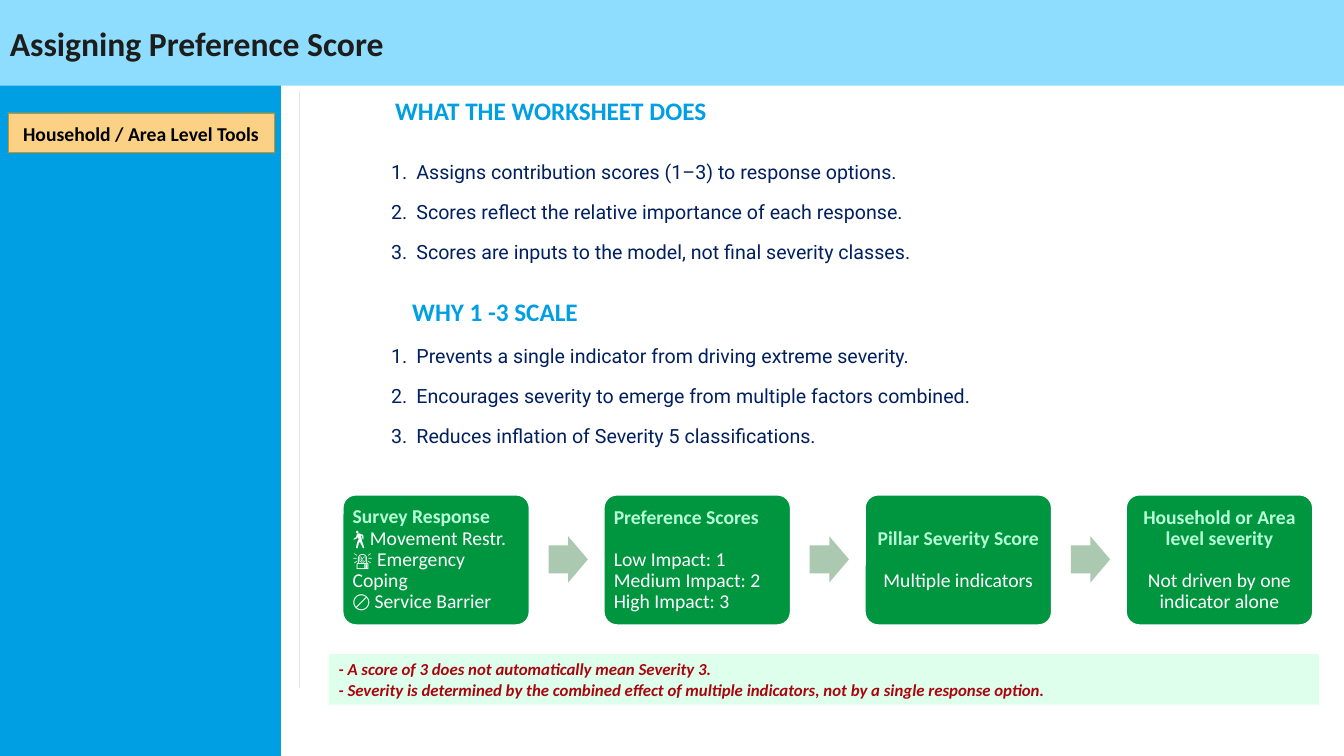
from pptx import Presentation
from pptx.dml.color import RGBColor
from pptx.enum.shapes import MSO_CONNECTOR, MSO_SHAPE
from pptx.enum.text import MSO_ANCHOR, PP_ALIGN
from pptx.oxml.ns import qn
from pptx.util import Inches, Pt
from lxml import etree

RECT = MSO_SHAPE.RECTANGLE
ROUND = MSO_SHAPE.ROUNDED_RECTANGLE
ARROW = MSO_SHAPE.RIGHT_ARROW
LEFT, MID = PP_ALIGN.LEFT, PP_ALIGN.CENTER
TOP, CENTER = MSO_ANCHOR.TOP, MSO_ANCHOR.MIDDLE

deck = Presentation()
deck.slide_width, deck.slide_height = Inches(13.33), Inches(7.5)
slide = deck.slides.add_slide(deck.slide_layouts[6])
shapes = slide.shapes


def block(kind, x, y, w, h, fill, edge=None, width=1):
    shape = shapes.add_shape(kind, Inches(x), Inches(y), Inches(w), Inches(h))
    shape.shadow.inherit = False
    shape.fill.solid()
    shape.fill.fore_color.rgb = RGBColor.from_string(fill)
    if edge:
        shape.line.color.rgb = RGBColor.from_string(edge)
        shape.line.width = Pt(width)
    else:
        shape.line.fill.background()
    return shape


def write(shape, lines, size=14, color="000000", font="Calibri", bold=False,
          italic=False, align=LEFT, anchor=TOP, inset=None, after=0,
          space=1.0, number=False, more=False):
    frame = shape.text_frame
    frame.word_wrap = True
    frame.vertical_anchor = anchor
    if inset is not None:
        frame.margin_left = frame.margin_right = Inches(inset)
        frame.margin_top = frame.margin_bottom = Inches(inset)
    for i, line in enumerate(lines):
        para = frame.add_paragraph() if i or more else frame.paragraphs[0]
        para.alignment = align
        para.line_spacing = space
        para.space_after = Pt(after)
        if number:
            props = para._p.get_or_add_pPr()
            props.set("marL", str(Inches(0.25)))
            props.set("indent", str(Inches(-0.25)))
            mark = etree.SubElement(props, qn("a:buAutoNum"))
            mark.set("type", "arabicPeriod")
        run = para.add_run()
        run.text = line
        face = run.font
        face.size, face.name = Pt(size), font
        face.bold, face.italic = bold, italic
        face.color.rgb = RGBColor.from_string(color)


block(RECT, 0, 0, 2.78, 7.5, "009FE3", "009FE3")
banner = block(RECT, 0, 0, 13.33, 0.85, "8EDDFF")
write(banner, ["Assigning Preference Score"], size=24, color="1D1D1B",
      bold=True, anchor=CENTER)

rule = shapes.add_connector(MSO_CONNECTOR.STRAIGHT, Inches(2.97), Inches(0.9),
                            Inches(2.97), Inches(6.83))
rule.line.color.rgb = RGBColor.from_string("E6E6E6")
rule.line.width = Pt(1)
etree.SubElement(rule._element.spPr, qn("a:effectLst"))

label = block(RECT, 0.08, 1.12, 2.64, 0.39, "FBD185", "DB8E06", 0.5)
write(label, ["Household / Area Level Tools"], bold=True, align=MID,
      anchor=CENTER, space=1.07, after=8)

topics = [
    ("WHAT THE WORKSHEET DOES", 3.82, 0.9, 1.31, 9.3, 1.58, [
        "Assigns contribution scores (1–3) to response options.",
        "Scores reflect the relative importance of each response.",
        "Scores are inputs to the model, not final severity classes."]),
    ("WHY 1 -3 SCALE", 3.99, 2.89, 3.36, 7.51, 1.13, [
        "Prevents a single indicator from driving extreme severity.",
        "Encourages severity to emerge from multiple factors combined.",
        "Reduces inflation of Severity 5 classifications."]),
]
for title, x, y, top, w, h, points in topics:
    head = shapes.add_textbox(Inches(x), Inches(y), Inches(6.68), Inches(0.4))
    write(head, [title], size=18, color="009FE3", bold=True)
    body = shapes.add_textbox(Inches(3.88), Inches(top), Inches(w), Inches(h))
    write(body, points, color="002060", font="Roboto", anchor=CENTER,
          inset=0, after=12, number=True)

note = block(RECT, 3.26, 6.49, 9.82, 0.5, "DDFFEC")
write(note, [
    "- A score of 3 does not automatically mean Severity 3.",
    "- Severity is determined by the combined effect of multiple indicators, "
    "not by a single response option."],
    size=12, color="AA050E", bold=True, italic=True)

steps = [
    ("Survey Response",
     ["🚶 Movement Restr.", "🚨 Emergency Coping", "🚫 Service Barrier"], LEFT, 0),
    ("Preference Scores",
     ["Low Impact: 1", "Medium Impact: 2", "High Impact: 3"], LEFT, 15),
    ("Pillar Severity Score", ["Multiple indicators"], MID, 15),
    ("Household or Area level severity",
     ["Not driven by one indicator alone"], MID, 15),
]
for i, (title, lines, align, gap) in enumerate(steps):
    x = 3.4 + 2.59 * i
    card = block(ROUND, x, 4.91, 1.85, 1.29, "009640", "FFFFFF")
    card.adjustments[0] = 0.1
    write(card, [title], color="B7FFD6", bold=True, align=align,
          anchor=CENTER, inset=0.06, space=0.9, after=gap)
    write(card, lines, color="FFFFFF", align=align, anchor=CENTER,
          space=0.9, more=True)
    if i < len(steps) - 1:
        arrow = block(ARROW, x + 2.04, 5.32, 0.39, 0.46, "ABC9B0")
        arrow.adjustments[0] = 0.6

deck.save("out.pptx")
